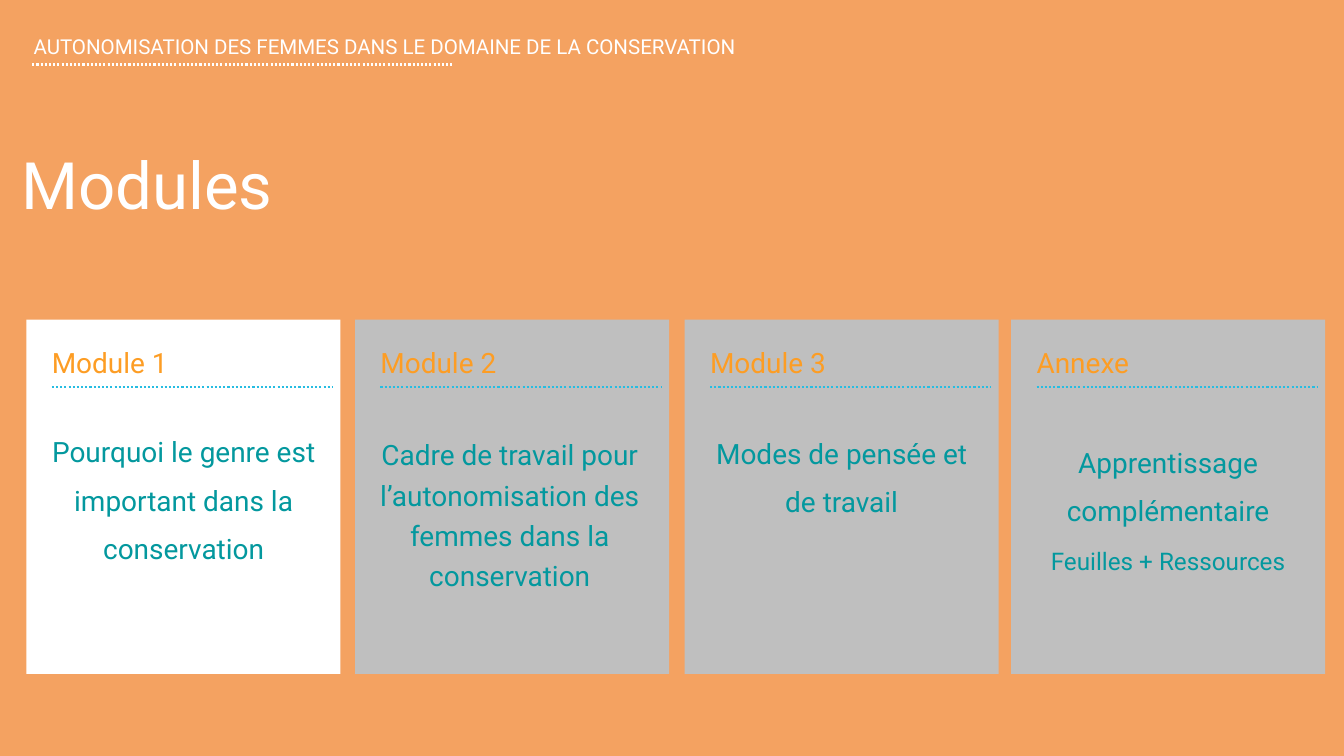
"""Build the slide that presents the four training modules."""

from dataclasses import dataclass

import pptx
import pptx.dml.color
import pptx.enum.dml
import pptx.enum.shapes
import pptx.enum.text
import pptx.oxml.ns
import pptx.presentation
import pptx.shapes.autoshape
import pptx.slide
import pptx.util
from lxml import etree

Cm = pptx.util.Cm
Align = pptx.enum.text.PP_ALIGN

COLORS = {
    "background": "F4A261",
    "white": "FFFFFF",
    "inactive": "BFBFBF",
    "heading": "FD9D24",
    "body": "03989E",
    "rule": "26BDE2",
}

CARD_TOP, CARD_WIDTH, CARD_HEIGHT = 12.08, 11.87, 13.4
INSET, INNER_WIDTH = 0.96, 10.59


@dataclass(frozen=True)
class Box:
    left: float
    top: float
    width: float
    height: float


@dataclass(frozen=True)
class Module:
    left: float
    heading: str
    body: str
    body_box: Box
    fill: str = "inactive"
    spacing: float = 51.8
    note: str = ""


MODULES = [
    Module(1, "Module 1", "Pourquoi le genre est important dans la conservation",
           Box(1.65, 15.88, 10.59, 5.41), fill="white"),
    Module(13.42, "Module 2",
           "Cadre de travail pour l’autonomisation des femmes dans la conservation",
           Box(13.77, 16.28, 11, 6.07), spacing=43.4),
    Module(25.88, "Module 3", "Modes de pensée et de travail",
           Box(27, 15.95, 9.63, 3.56)),
    Module(38.22, "Annexe", "Apprentissage complémentaire ",
           Box(38.86, 16.28, 10.59, 5.36), note="Feuilles + Ressources"),
]


def rgb(name: str) -> pptx.dml.color.RGBColor:
    """Return the named colour."""
    return pptx.dml.color.RGBColor.from_string(COLORS[name])


def add_text(slide: pptx.slide.Slide, text: str, box: Box, *, size: float,
             color: str, spacing: float, align: Align = Align.LEFT,
             note: str = "", note_size: float = 26,
             sp: pptx.shapes.autoshape.Shape | None = None) -> None:
    """Write one paragraph in a new text box or in a given placeholder."""
    if sp is None:
        sp = slide.shapes.add_textbox(0, 0, 0, 0)
    sp.left, sp.top = Cm(box.left), Cm(box.top)
    sp.width, sp.height = Cm(box.width), Cm(box.height)
    tf = sp.text_frame
    tf.word_wrap = True
    tf.auto_size = pptx.enum.text.MSO_AUTO_SIZE.NONE
    tf.vertical_anchor = pptx.enum.text.MSO_ANCHOR.TOP
    tf.margin_left = tf.margin_right = tf.margin_top = tf.margin_bottom = 0
    p = tf.paragraphs[0]
    p.alignment = align
    p.line_spacing = pptx.util.Pt(spacing)
    for content, points in ((text, size), (note, note_size)):
        if content:
            r = p.add_run()
            r.text = content
            r.font.name = "Roboto"
            r.font.size = pptx.util.Pt(points)
            r.font.color.rgb = rgb(color)


def add_rule(slide: pptx.slide.Slide, left: float, top: float, width: float,
             color: str) -> None:
    """Draw a horizontal dotted line."""
    line = slide.shapes.add_connector(
        pptx.enum.shapes.MSO_CONNECTOR.STRAIGHT,
        Cm(left), Cm(top), Cm(left + width), Cm(top))
    line.line.color.rgb = rgb(color)
    line.line.width = pptx.util.Pt(2.25)
    line.line.dash_style = pptx.enum.dml.MSO_LINE.ROUND_DOT
    sp_pr = line._element.spPr
    etree.SubElement(sp_pr, pptx.oxml.ns.qn("a:effectLst"))


def add_module(slide: pptx.slide.Slide, module: Module) -> None:
    """Draw a module card with its heading, rule and description."""
    card = slide.shapes.add_shape(
        pptx.enum.shapes.MSO_SHAPE.RECTANGLE,
        Cm(module.left), Cm(CARD_TOP), Cm(CARD_WIDTH), Cm(CARD_HEIGHT))
    card.shadow.inherit = False
    card.fill.solid()
    card.fill.fore_color.rgb = rgb(module.fill)
    card.line.fill.background()
    left = module.left + INSET
    add_rule(slide, left, CARD_TOP + 2.55, INNER_WIDTH, "rule")
    add_text(slide, module.heading, Box(left, CARD_TOP + 0.77, INNER_WIDTH, 1.45),
             size=30, color="heading", spacing=42)
    add_text(slide, module.body, module.body_box, size=30, color="body",
             spacing=module.spacing, align=Align.CENTER, note=module.note)


def main() -> None:
    """Create the presentation and save it."""
    prs = pptx.Presentation()
    prs.slide_width, prs.slide_height = Cm(50.8), Cm(28.58)
    s = prs.slides.add_slide(prs.slide_layouts.get_by_name("Title Only"))
    s.background.fill.solid()
    s.background.fill.fore_color.rgb = rgb("background")
    add_text(s, "Modules", Box(0.81, 5.44, 27.03, 2.97), size=70, color="white",
             spacing=84, sp=s.shapes.title)
    add_text(s, "AUTONOMISATION DES FEMMES DANS LE DOMAINE DE LA CONSERVATION",
             Box(1.27, 1.3, 31.95, 0.91), size=22, color="white", spacing=26.4)
    add_rule(s, 1.22, 2.44, 15.93, "white")
    for module in MODULES:
        add_module(s, module)
    prs.save("out.pptx")


if __name__ == "__main__":
    main()
